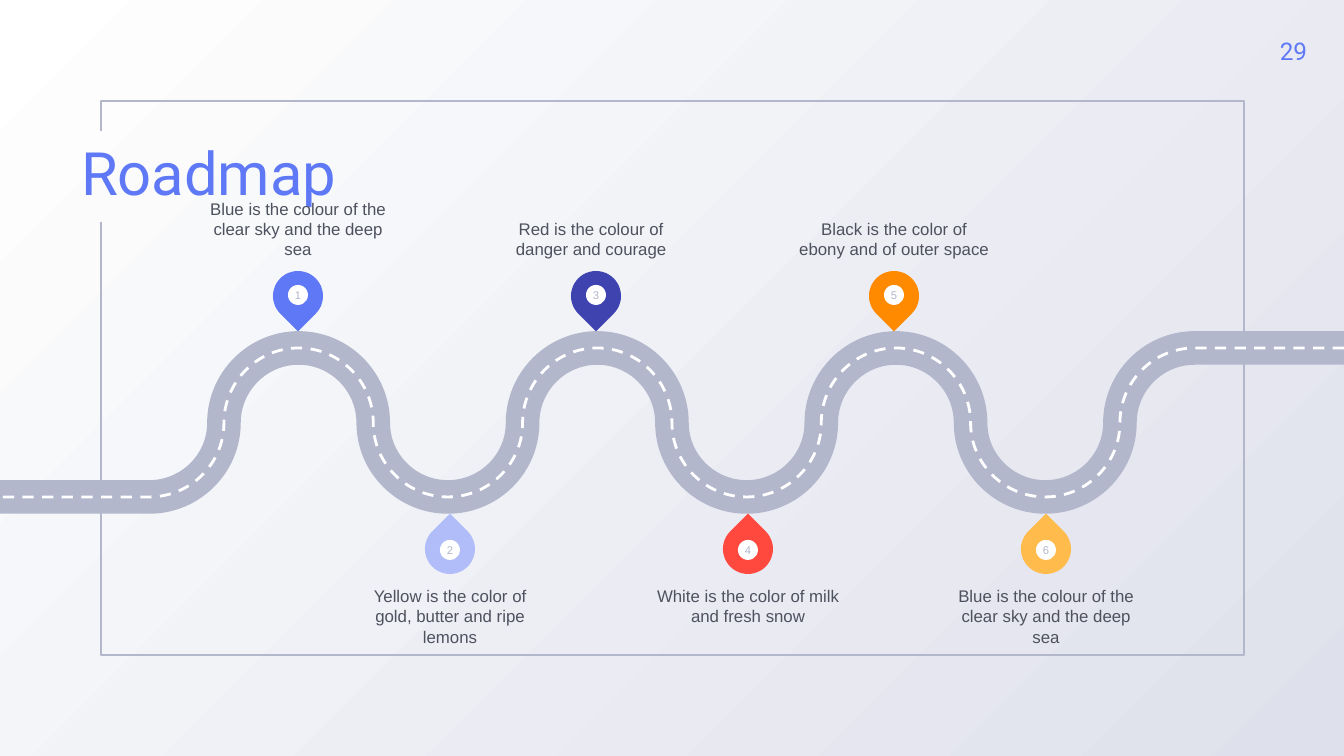
from pptx import Presentation
from pptx.dml.color import RGBColor
from pptx.enum.dml import MSO_LINE
from pptx.enum.shapes import MSO_SHAPE as Shape
from pptx.enum.text import MSO_ANCHOR as Anchor, MSO_AUTO_SIZE as AutoSize, PP_ALIGN as Align
from pptx.oxml.ns import qn
from pptx.util import Pt
from lxml.etree import SubElement

EMU_PER_PX = 914400 / 134.4
WIDTH, HEIGHT = 1344, 756
COLORS = {
    "white": "FFFFFF", "mist": "DEE0EB", "road": "B3B7CC", "text": "4E515E",
    "blue": "5F79F6", "lilac": "B1BDF8", "indigo": "3F43AF",
    "red": "FF493F", "orange": "FF8A00", "amber": "FFBB4B",
}

# Road: a quarter arc per step, troughs and crests alternating
ROAD_STEP = WIDTH / 18
CREST, MIDDLE, TROUGH = 348, 423, 497
ARC_HANDLE = 0.55

# Milestones: colour, caption, caption shift in px
PIN_SIZE, DOT_SIZE, PIN_STEP = 50, 20, 298
MILESTONES = [
    ("blue", "Blue is the colour of the clear sky and the deep sea", 0),
    ("lilac", "Yellow is the color of gold, butter and ripe lemons", 0),
    ("indigo", "Red is the colour of danger and courage", -5),
    ("red", "White is the color of milk and fresh snow", 0),
    ("orange", "Black is the color of ebony and of outer space", 0),
    ("amber", "Blue is the colour of the clear sky and the deep sea", 0),
]


def px(length):
    return round(length * EMU_PER_PX)


def rgb(name):
    return RGBColor.from_string(COLORS[name])


def write(shape, text, size, font, color, align=Align.CENTER, anchor=Anchor.MIDDLE, wrap=True):
    frame = shape.text_frame
    frame.text = text
    frame.word_wrap = wrap
    frame.auto_size = AutoSize.NONE
    frame.vertical_anchor = anchor
    frame.margin_left = frame.margin_right = frame.margin_top = frame.margin_bottom = 0
    paragraph = frame.paragraphs[0]
    paragraph.alignment = align
    run_font = paragraph.runs[0].font
    run_font.size, run_font.name = Pt(size), font
    run_font.color.rgb = rgb(color)
    return paragraph


def add_label(slide, box, text, size, font, color, anchor=Anchor.MIDDLE):
    label = slide.shapes.add_textbox(*map(px, box))
    write(label, text, size, font, color, anchor=anchor)


def add_solid(shapes, kind, center_x, center_y, size, color):
    solid = shapes.add_shape(kind, px(center_x - size / 2), px(center_y - size / 2), px(size), px(size))
    solid.shadow.inherit = False
    solid.fill.solid()
    solid.fill.fore_color.rgb = rgb(color)
    solid.line.fill.background()
    return solid


def add_outline(slide, points, color, weight):
    start, *others = [(px(x), px(y)) for x, y in points]
    builder = slide.shapes.build_freeform(*start)
    builder.add_line_segments(others, close=False)
    outline = builder.convert_to_shape()
    outline.shadow.inherit = False
    outline.fill.background()
    outline.line.color.rgb = rgb(color)
    outline.line.width = Pt(weight)
    return outline


def round_bends(outline):
    """Turn each slanted segment into a quarter arc, level at crests and troughs."""
    path = next(outline._element.iter(qn("a:path")))
    ends = [(int(pt.get("x")), int(pt.get("y"))) for pt in path.iter(qn("a:pt"))]
    middle = px(MIDDLE) - px(CREST)
    for segment, (x0, y0), (x1, y1) in zip(list(path)[1:], ends, ends[1:]):
        if y0 == y1:
            continue
        dx, dy = round((x1 - x0) * ARC_HANDLE), round((y1 - y0) * ARC_HANDLE)
        if y0 == middle:
            handles = [(x0, y0 + dy), (x1 - dx, y1)]
        else:
            handles = [(x0 + dx, y0), (x1, y1 - dy)]
        segment.tag = qn("a:cubicBezTo")
        segment.remove(segment[0])
        for x, y in handles + [(x1, y1)]:
            SubElement(segment, qn("a:pt"), x=str(x), y=str(y))


def add_road(slide):
    heights = {0: CREST, 1: MIDDLE, 2: TROUGH, 3: MIDDLE}
    bends = [(ROAD_STEP * step, heights[step % 4]) for step in range(16, 1, -1)]
    route = [(WIDTH, CREST), *bends, (0, TROUGH)]
    surface = add_outline(slide, route, "road", 18)
    markings = add_outline(slide, route, "white", 1.5)
    markings.line.dash_style = MSO_LINE.DASH
    for layer in (surface, markings):
        round_bends(layer)


def add_milestone(slide, index, color, caption, shift):
    column, below = divmod(index, 2)
    center_x = (450 if below else 298) + PIN_STEP * column
    pin_y, dot_y, rotation = (549, 550, 315) if below else (296, 295, 135)

    pin = slide.shapes.add_group_shape()
    drop = add_solid(pin.shapes, Shape.TEAR, center_x, pin_y, PIN_SIZE, color)
    drop.rotation = rotation
    dot = add_solid(pin.shapes, Shape.OVAL, center_x, dot_y, DOT_SIZE, "white")
    write(dot, str(index + 1), 6, "Arial", "road", wrap=False)

    caption_box = (center_x + shift - 95, 586 if below else 181, 190, 78)
    add_label(slide, caption_box, caption, 9, "Arial", "text", Anchor.TOP if below else Anchor.BOTTOM)


def paint_background(slide):
    fill = slide.background.fill
    fill.gradient()
    fill.gradient_angle = 315
    for stop, color in zip(fill.gradient_stops, ("white", "mist")):
        stop.color.rgb = rgb(color)


def add_title(slide, text):
    title = slide.shapes.title
    title.left, title.top, title.width, title.height = map(px, (81, 130, 1142, 93))
    write(title, text, 32, "Roboto", "blue", Align.LEFT).line_spacing = 0.9


def main():
    deck = Presentation()
    deck.slide_width, deck.slide_height = px(WIDTH), px(HEIGHT)
    slide = deck.slides.add_slide(deck.slide_layouts[5])
    paint_background(slide)

    # Open frame with a gap beside the title
    frame = [(101, 131), (101, 101), (1244, 101), (1244, 655), (101, 655), (101, 222)]
    add_outline(slide, frame, "road", 0.75)

    # Title and page number
    add_title(slide, "Roadmap")
    add_label(slide, (1243, 0, 101, 101), "29", 13, "Roboto", "blue")

    # Road and its milestones
    add_road(slide)
    for index, milestone in enumerate(MILESTONES):
        add_milestone(slide, index, *milestone)

    deck.save("out.pptx")


if __name__ == "__main__":
    main()
